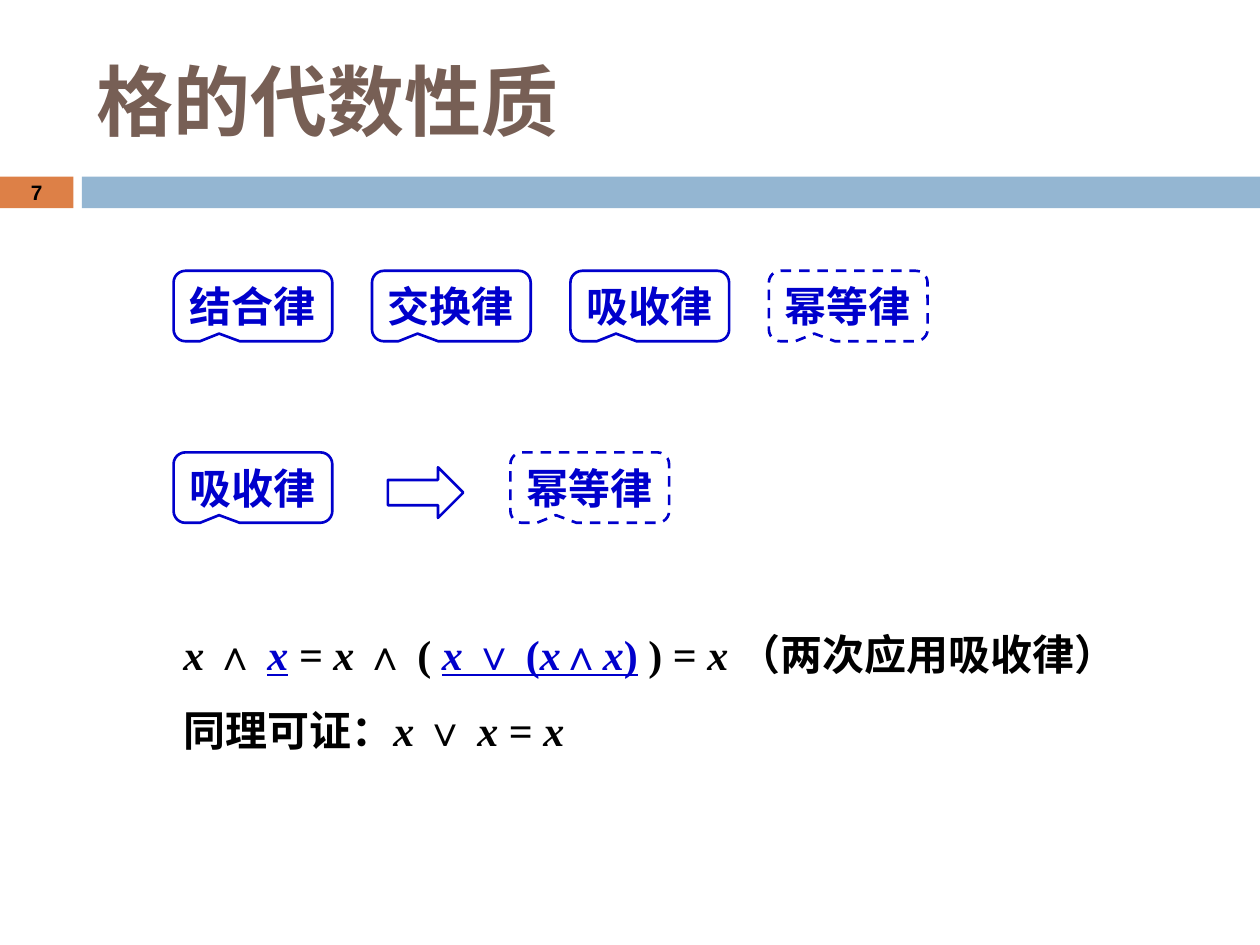
from pptx import Presentation
from pptx.dml.color import RGBColor
from pptx.enum.dml import MSO_LINE
from pptx.enum.shapes import MSO_SHAPE
from pptx.enum.text import MSO_ANCHOR, MSO_AUTO_SIZE, PP_ALIGN
from pptx.util import Cm, Pt

RECT = MSO_SHAPE.RECTANGLE
CALLOUT = MSO_SHAPE.ROUNDED_RECTANGULAR_CALLOUT
DOWN_ARROW = MSO_SHAPE.DOWN_ARROW
DASH = MSO_LINE.DASH
MIDDLE = MSO_ANCHOR.MIDDLE
LEFT, CENTER, JUSTIFY = PP_ALIGN.LEFT, PP_ALIGN.CENTER, PP_ALIGN.JUSTIFY

BLACK = RGBColor(0x00, 0x00, 0x00)
BLUE = RGBColor(0x00, 0x00, 0xCC)
BROWN = RGBColor(0x77, 0x5F, 0x55)
ORANGE = RGBColor(0xDD, 0x80, 0x47)
PALE_BLUE = RGBColor(0x94, 0xB6, 0xD2)

LAW_W, LAW_H = 3.2, 1.42
LAW_PITCH = 4.0

# Each run: text, italic, colour, underlined
PROOF = [
    [("x ", True, BLACK, False), ("∧ ", False, BLACK, False),
     ("x", True, BLUE, True), (" = x ", True, BLACK, False),
     ("∧ ( ", False, BLACK, False), ("x ", True, BLUE, True),
     ("∨ (", False, BLUE, True), ("x", True, BLUE, True),
     ("∧", False, BLUE, True), ("x", True, BLUE, True),
     (")", False, BLUE, True), (" ", False, BLUE, False),
     (") = ", False, BLACK, False), ("x ", True, BLACK, False),
     ("（两次应用吸收律）", False, BLACK, False)],
    [("同理可证：", False, BLACK, False), ("x ", True, BLACK, False),
     ("∨ ", False, BLACK, False), ("x ", True, BLACK, False),
     ("= ", False, BLACK, False), ("x ", True, BLACK, False)],
]


def add_run(p, text, size, font, color, italic=False, underline=False):
    r = p.add_run()
    r.text = text
    f = r.font
    f.name, f.size, f.bold = font, Pt(size), True
    f.italic, f.underline = italic, underline
    f.color.rgb = color


def add_bar(shapes, x, y, w, h, color):
    sp = shapes.add_shape(RECT, Cm(x), Cm(y), Cm(w), Cm(h))
    sp.shadow.inherit = False
    sp.fill.solid()
    sp.fill.fore_color.rgb = color
    sp.line.fill.background()


def add_outline(shapes, kind, x, y, w, h):
    sp = shapes.add_shape(kind, Cm(x), Cm(y), Cm(w), Cm(h))
    sp.shadow.inherit = False
    sp.fill.background()
    sp.line.color.rgb = BLUE
    sp.line.width = Pt(1.5)
    return sp


def add_law(shapes, x, y, name, derived=False):
    """Callout naming a law; a derived law has a dashed outline."""
    sp = add_outline(shapes, CALLOUT, x, y, LAW_W, LAW_H)
    for i, value in enumerate((-0.213, 0.392, 0.167)):
        sp.adjustments[i] = value
    if derived:
        sp.line.dash_style = DASH
    tf = sp.text_frame
    tf.word_wrap = False
    tf.auto_size = MSO_AUTO_SIZE.SHAPE_TO_FIT_TEXT
    tf.vertical_anchor = MSO_ANCHOR.TOP
    p = tf.paragraphs[0]
    p.alignment = LEFT
    add_run(p, name, 24, "Arial", BLUE)


def add_title(s, x, y, w, h):
    sp = s.shapes.title
    sp.left, sp.top, sp.width, sp.height = Cm(x), Cm(y), Cm(w), Cm(h)
    tf = sp.text_frame
    tf.vertical_anchor = MIDDLE
    p = tf.paragraphs[0]
    p.alignment = LEFT
    add_run(p, "格的代数性质", 44, "Calibri", BROWN)


def add_band(s, x, y, w, h):
    """Coloured band under the title, with the slide number at its left."""
    number_w, gap = 1.48, 0.17
    start = number_w + gap
    add_bar(s.shapes, x, y, number_w, h, ORANGE)
    add_bar(s.shapes, x + start, y, w - start, h, PALE_BLUE)
    sp = s.shapes.add_textbox(Cm(x), Cm(y), Cm(number_w), Cm(h))
    tf = sp.text_frame
    tf.word_wrap = True
    tf.margin_top = tf.margin_bottom = 0
    tf.vertical_anchor = MIDDLE
    p = tf.paragraphs[0]
    p.alignment = CENTER
    add_run(p, "7", 11.9, "Arial", BLACK)


def add_laws(s, x, y):
    shapes = s.shapes.add_group_shape().shapes
    names = ("结合律", "交换律", "吸收律", "幂等律")
    for i, name in enumerate(names):
        add_law(shapes, x + i * LAW_PITCH, y, name, derived=name == "幂等律")


def add_implication(s, x, y):
    shapes = s.shapes.add_group_shape().shapes
    add_law(shapes, x, y, "吸收律")
    arrow = add_outline(shapes, DOWN_ARROW, x + 4.57, y + 0.05, 1.02, 1.52)
    arrow.rotation = 270
    add_law(shapes, x + 6.79, y, "幂等律", derived=True)


def add_proof(s, x, y, w, h):
    tf = s.shapes.add_textbox(Cm(x), Cm(y), Cm(w), Cm(h)).text_frame
    tf.word_wrap = True
    tf.margin_left = Cm(1.52)
    for i, runs in enumerate(PROOF):
        p = tf.add_paragraph() if i else tf.paragraphs[0]
        p.alignment = JUSTIFY
        p.line_spacing = 1.5
        for text, italic, color, underline in runs:
            add_run(p, text, 24, "Times New Roman", color, italic, underline)


def main():
    prs = Presentation()
    prs.slide_width, prs.slide_height = Cm(25.4), Cm(19.05)
    s = prs.slides.add_slide(prs.slide_layouts[5])
    add_title(s, 1.7, 0.64, 22.66, 2.74)
    add_band(s, 0, 3.56, 25.4, 0.64)
    add_laws(s, 3.5, 5.46)
    add_implication(s, 3.5, 9.12)
    add_proof(s, 2.18, 12.04, 22.63, 3)
    prs.save("out.pptx")


if __name__ == "__main__":
    main()
